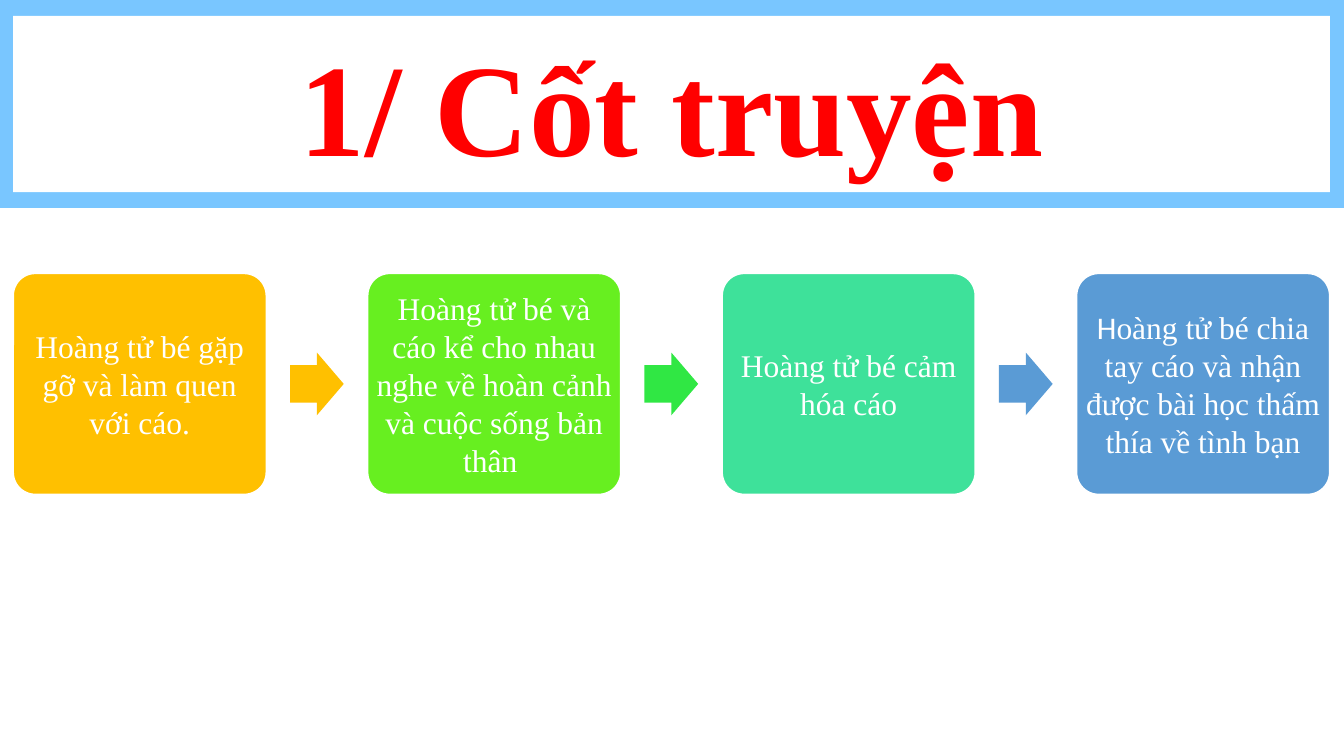
from dataclasses import dataclass
from pptx import Presentation
from pptx.dml.color import RGBColor
from pptx.enum.shapes import MSO_SHAPE
from pptx.enum.text import MSO_ANCHOR, MSO_AUTO_SIZE, PP_ALIGN
from pptx.util import Pt


@dataclass(frozen=True)
class Theme:
    frame: str = "79C6FF"
    white: str = "FFFFFF"
    title: str = "FF0000"
    steps: tuple = ("FFC000", "67EF20", "3EE19A", "5A9BD5")
    arrows: tuple = ("FFC000", "30E744", "5A9BD5")
    title_size: float = 75
    step_size: float = 18
    font: str = "Times New Roman"
    initial_font: str = "Calibri"


def add_text(para, text, *, size, color, font=Theme.font, bold=False):
    para.alignment = PP_ALIGN.CENTER
    span = para.add_run()
    span.text = text
    span.font.name = font
    span.font.size = Pt(size)
    span.font.bold = bold
    span.font.color.rgb = RGBColor.from_string(color)


def add_box(page, kind, left, top, width, height, fill):
    box = page.shapes.add_shape(kind, Pt(left), Pt(top), Pt(width), Pt(height))
    box.shadow.inherit = False
    box.fill.solid()
    box.fill.fore_color.rgb = RGBColor.from_string(fill)
    box.line.fill.background()
    return box


theme = Theme()
deck = Presentation()
deck.slide_width, deck.slide_height = Pt(768), Pt(432)
page = deck.slides.add_slide(deck.slide_layouts[5])

banner = add_box(page, MSO_SHAPE.RECTANGLE, 0, 0, 768, 118.8, theme.frame)
title = page.shapes.title
banner.element.addnext(title.element)
title.left, title.top, title.width, title.height = Pt(7.5), Pt(9), Pt(752.4), Pt(100.8)
title.fill.solid()
title.fill.fore_color.rgb = RGBColor.from_string(theme.white)
title.text_frame.auto_size = MSO_AUTO_SIZE.NONE
title.text_frame.vertical_anchor = MSO_ANCHOR.MIDDLE
add_text(title.text_frame.paragraphs[0], "1/ Cốt truyện",
         size=theme.title_size, color=theme.title, bold=True)

steps = [
    [("Hoàng tử bé gặp gỡ và làm quen với cáo.", theme.font)],
    [("Hoàng tử bé và cáo kể cho nhau nghe về hoàn cảnh và cuộc sống bản thân ", theme.font)],
    [("Hoàng tử bé cảm hóa cáo", theme.font)],
    [("H", theme.initial_font),
     ("oàng tử bé chia tay cáo và nhận được bài học thấm thía về tình bạn", theme.font)],
]
first_left, step_top, step_width, step_height, pitch = 7.5, 156.2, 144.7, 126.4, 202.55
arrow_width, arrow_height = 30.7, 35.9
arrow_top = step_top + (step_height - arrow_height) / 2

for index, (parts, fill) in enumerate(zip(steps, theme.steps)):
    left = first_left + index * pitch
    box = add_box(page, MSO_SHAPE.ROUNDED_RECTANGLE, left, step_top,
                  step_width, step_height, fill)
    box.adjustments[0] = 0.1
    box.line.color.rgb = RGBColor.from_string(theme.white)
    box.line.width = Pt(1)
    frame = box.text_frame
    frame.word_wrap = True
    frame.vertical_anchor = MSO_ANCHOR.MIDDLE
    frame.margin_left = frame.margin_right = Pt(1)
    frame.margin_top = frame.margin_bottom = Pt(1)
    for text, font in parts:
        add_text(frame.paragraphs[0], text, size=theme.step_size,
                 color=theme.white, font=font)

    if index < len(theme.arrows):
        arrow = add_box(page, MSO_SHAPE.RIGHT_ARROW, left + 158.2, arrow_top,
                        arrow_width, arrow_height, theme.arrows[index])
        arrow.adjustments[0] = 0.6
        arrow.adjustments[1] = 0.5

deck.save("out.pptx")
